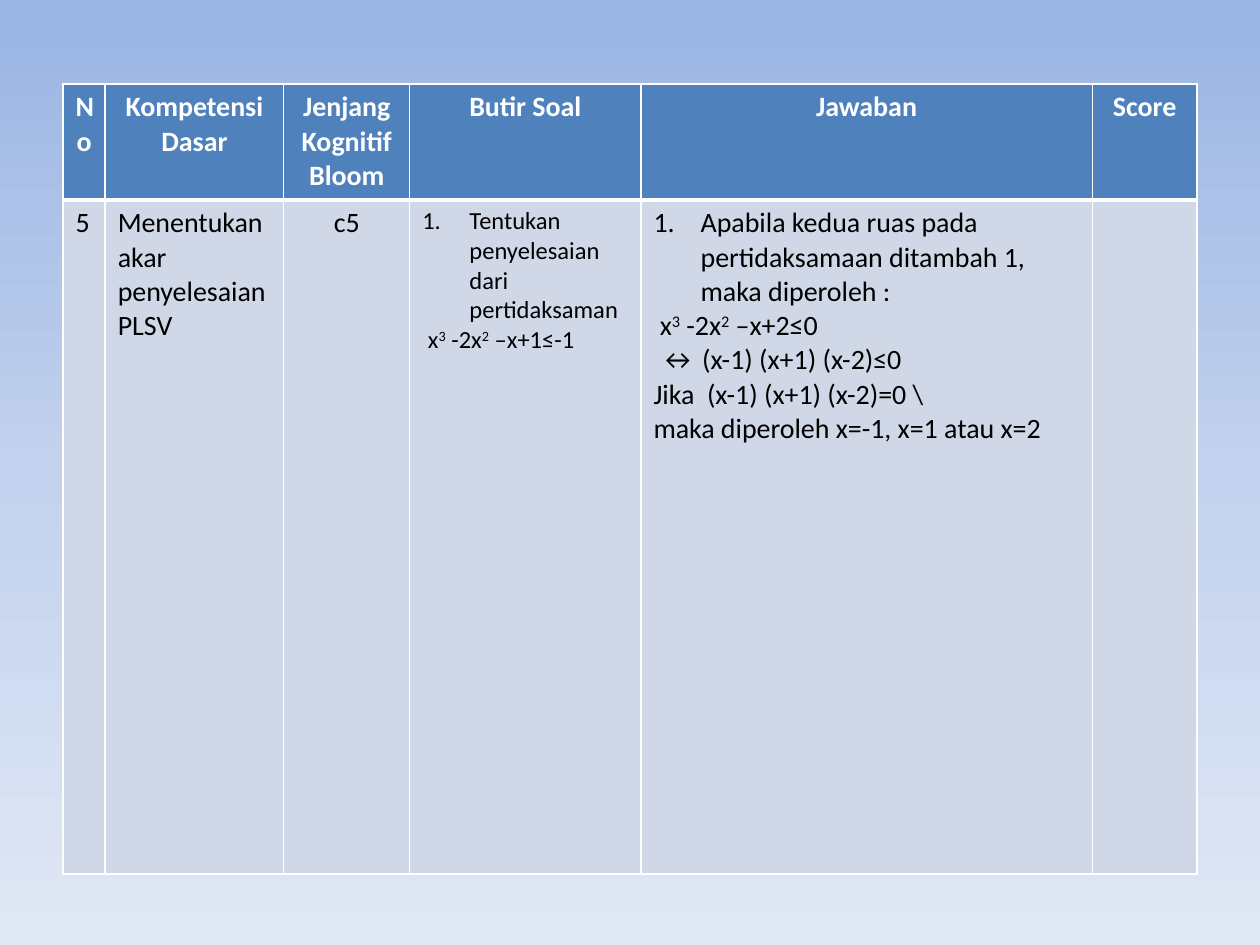
from copy import deepcopy

from lxml.etree import SubElement
from pptx import Presentation
from pptx.dml.color import RGBColor
from pptx.enum.text import PP_ALIGN as Align
from pptx.oxml.ns import qn
from pptx.util import Cm, Pt

COLORS = {
    "sky_top": "9AB5E4", "sky_middle": "C2D1ED", "sky_bottom": "E1E8F5",
    "header": "4F81BD", "body": "D0D8E8", "rule": "FFFFFF",
    "header_text": "FFFFFF", "body_text": "000000",
}
COLUMN_WIDTHS = [0.85, 3.6, 2.54, 4.66, 9.1, 2.11]
ROW_HEIGHTS = [2.34, 13.59]
HEADINGS = ["No", "Kompetensi Dasar", "Jenjang Kognitif Bloom",
            "Butir Soal", "Jawaban", "Score"]
# Text between bars is superscript
QUESTION = ["Tentukan penyelesaian  dari pertidaksaman",
            " x|3| -2x|2| –x+1≤-1"]
ANSWER = ["Apabila kedua ruas pada pertidaksamaan ditambah 1, maka diperoleh :",
          " x|3| -2x|2| –x+2≤0",
          " ↔ (x-1) (x+1) (x-2)≤0",
          "Jika  (x-1) (x+1) (x-2)=0 \\",
          "maka diperoleh x=-1, x=1 atau x=2"]


class SlideBuilder:
    font_name = "Calibri"
    hanging = Cm(0.95)

    def __init__(self, slide):
        self.slide = slide

    def color(self, name):
        return RGBColor.from_string(COLORS[name])

    def background(self, *names):
        fill = self.slide.background.fill
        fill.gradient()
        fill.gradient_angle = 270
        first_stop = fill._fill._gradFill.gsLst[0]
        first_stop.addnext(deepcopy(first_stop))
        for i, (stop, name) in enumerate(zip(fill.gradient_stops, names)):
            stop.position = i / (len(names) - 1)
            stop.color.rgb = self.color(name)

    def table(self, left, top, widths, heights):
        grid = self.slide.shapes.add_table(
            len(heights), len(widths), Cm(left), Cm(top),
            Cm(sum(widths)), Cm(sum(heights))).table
        grid.horz_banding = False
        for column, width in zip(grid.columns, widths):
            column.width = Cm(width)
        for row, height in zip(grid.rows, heights):
            row.height = Cm(height)
        return grid

    def cell(self, cell, fill, top=1, bottom=1):
        properties = cell._tc.get_or_add_tcPr()
        for side, width in zip("LRTB", (1, 1, top, bottom)):
            line = SubElement(properties, qn(f"a:ln{side}"), w=str(Pt(width)))
            solid = SubElement(line, qn("a:solidFill"))
            SubElement(solid, qn("a:srgbClr"), val=COLORS["rule"])
        cell.fill.solid()
        cell.fill.fore_color.rgb = self.color(fill)

    def text(self, cell, lines, color, size=16, bold=False,
             align=Align.LEFT, numbered=False):
        frame = cell.text_frame
        for i, line in enumerate(lines):
            paragraph = frame.add_paragraph() if i else frame.paragraphs[0]
            paragraph.alignment = align
            font = paragraph.font
            font.name, font.size, font.bold = self.font_name, Pt(size), bold
            font.color.rgb = self.color(color)
            if numbered:
                self.hang(paragraph, number=i == 0)
            for j, part in enumerate(line.split("|")):
                run = paragraph.add_run()
                run.text = part
                if j % 2:
                    run._r.get_or_add_rPr().set("baseline", "30000")

    def hang(self, paragraph, number):
        properties = paragraph._p.get_or_add_pPr()
        properties.set("marL", str(self.hanging))
        properties.set("indent", str(-self.hanging))
        if number:
            bullet = SubElement(properties, qn("a:buAutoNum"), type="arabicPeriod")
            properties.find(qn("a:defRPr")).addprevious(bullet)


def main():
    deck = Presentation()
    deck.slide_width, deck.slide_height = Cm(25.4), Cm(19.05)
    builder = SlideBuilder(deck.slides.add_slide(deck.slide_layouts[6]))
    builder.background("sky_top", "sky_middle", "sky_bottom")

    # Question grid
    grid = builder.table(1.27, 1.69, COLUMN_WIDTHS, ROW_HEIGHTS)

    # Header row
    for column, heading in enumerate(HEADINGS):
        header = grid.cell(0, column)
        builder.cell(header, "header", bottom=3)
        builder.text(header, [heading], "header_text", bold=True, align=Align.CENTER)

    # Question row
    entries = [
        (["5"], {}),
        (["Menentukan akar penyelesaian PLSV"], {}),
        (["c5"], {"align": Align.CENTER}),
        (QUESTION, {"size": 14, "numbered": True}),
        (ANSWER, {"numbered": True}),
        ([], {}),
    ]
    for column, (lines, style) in enumerate(entries):
        entry = grid.cell(1, column)
        builder.cell(entry, "body", top=3)
        builder.text(entry, lines, "body_text", **style)

    deck.save("out.pptx")


if __name__ == "__main__":
    main()
